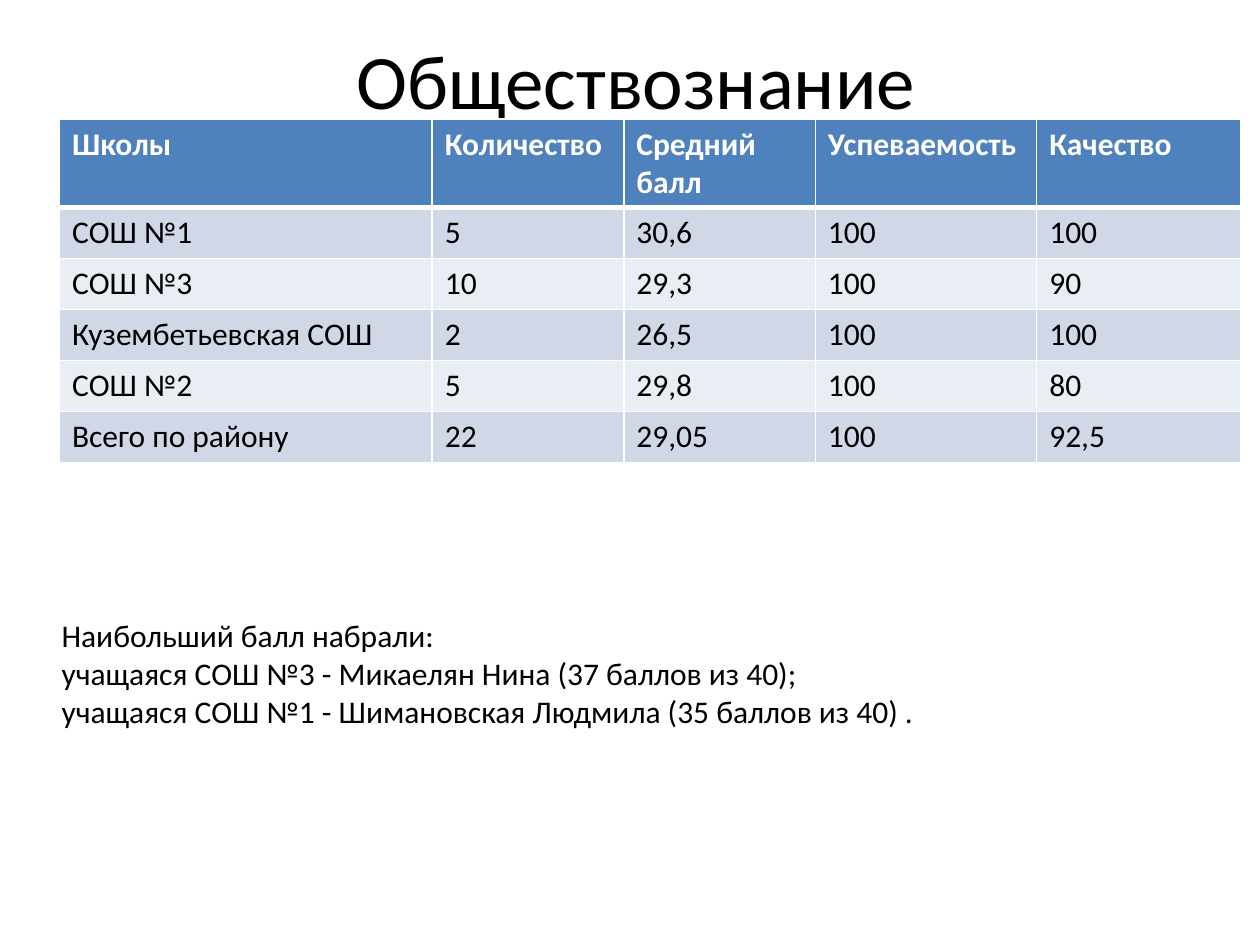
from dataclasses import dataclass

from lxml import etree
from pptx import Presentation
from pptx.dml.color import RGBColor
from pptx.enum import text
from pptx.oxml import ns
from pptx.util import Pt


@dataclass(frozen=True)
class Theme:
    font: str = "Calibri"
    title_size: int = 44
    body_size: int = 18
    ink: str = "000000"
    white: str = "FFFFFF"
    header: str = "4F81BD"
    bands: tuple = ("D0D8E8", "E9EDF4")


THEME = Theme()


def style(paragraph, size, color, bold=False):
    font = paragraph.font
    font.name, font.size, font.bold = THEME.font, Pt(size), bold
    font.color.rgb = RGBColor.from_string(color)


def add_border(cell, side, width):
    """Draw a white rule on one side (L, R, T or B) of a cell."""
    line = etree.SubElement(cell._tc.get_or_add_tcPr(), ns.qn(f"a:ln{side}"), w=str(Pt(width)))
    fill = etree.SubElement(line, ns.qn("a:solidFill"))
    etree.SubElement(fill, ns.qn("a:srgbClr"), val=THEME.white)


prs = Presentation()
prs.slide_width, prs.slide_height = Pt(720), Pt(540)
slide = prs.slides.add_slide(prs.slide_layouts[6])

# Title
title = slide.shapes.add_textbox(Pt(39.6), Pt(0), Pt(648), Pt(90)).text_frame
title.word_wrap = True
title.vertical_anchor = text.MSO_ANCHOR.MIDDLE
title.text = "Обществознание"
title.paragraphs[0].alignment = text.PP_ALIGN.CENTER
style(title.paragraphs[0], THEME.title_size, THEME.ink)

# Results by school
results = [
    ("Школы", "Количество", "Средний балл", "Успеваемость", "Качество"),
    ("СОШ №1", "5", "30,6", "100", "100"),
    ("СОШ №3", "10", "29,3", "100", "90"),
    ("Кузембетьевская СОШ", "2", "26,5", "100", "100"),
    ("СОШ №2", "5", "29,8", "100", "80"),
    ("Всего по району", "22", "29,05", "100", "92,5"),
]
column_widths = (213, 109.5, 109.5, 126.5, 116.7)
row_height = 29.2

table = slide.shapes.add_table(
    len(results), len(column_widths), Pt(34), Pt(68),
    Pt(sum(column_widths)), Pt(row_height * len(results)),
).table
for column, width in zip(table.columns, column_widths):
    column.width = Pt(width)

for r, row in enumerate(results):
    is_header = r == 0
    table.rows[r].height = Pt(row_height)
    for c, value in enumerate(row):
        cell = table.cell(r, c)
        cell.text = value
        style(cell.text_frame.paragraphs[0], THEME.body_size,
              THEME.white if is_header else THEME.ink, is_header)
        for side in "LRTB":
            thick = (is_header and side == "B") or (r == 1 and side == "T")
            add_border(cell, side, 3 if thick else 1)
        cell.fill.solid()
        cell.fill.fore_color.rgb = RGBColor.from_string(
            THEME.header if is_header else THEME.bands[(r - 1) % 2])

# Best scores
best_scores = slide.shapes.add_textbox(Pt(28.1), Pt(348.5), Pt(658), Pt(72.7)).text_frame
best_scores.word_wrap = True
best_scores.text = "\n".join((
    "Наибольший балл набрали:",
    "учащаяся СОШ №3 - Микаелян Нина (37 баллов из 40);",
    "учащаяся СОШ №1 - Шимановская Людмила (35 баллов из 40) .",
))
for paragraph in best_scores.paragraphs:
    style(paragraph, THEME.body_size, THEME.ink)

prs.save("out.pptx")
